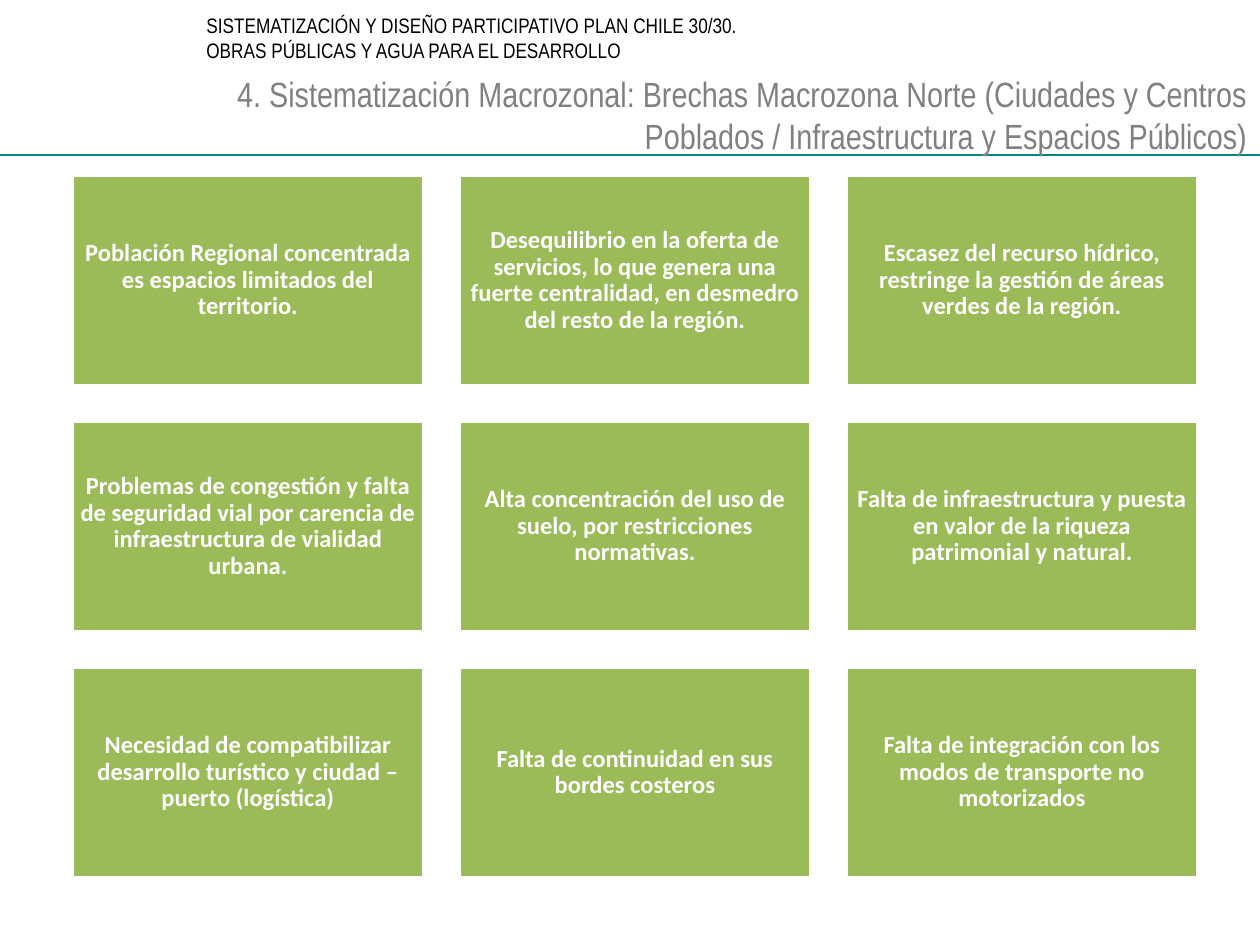
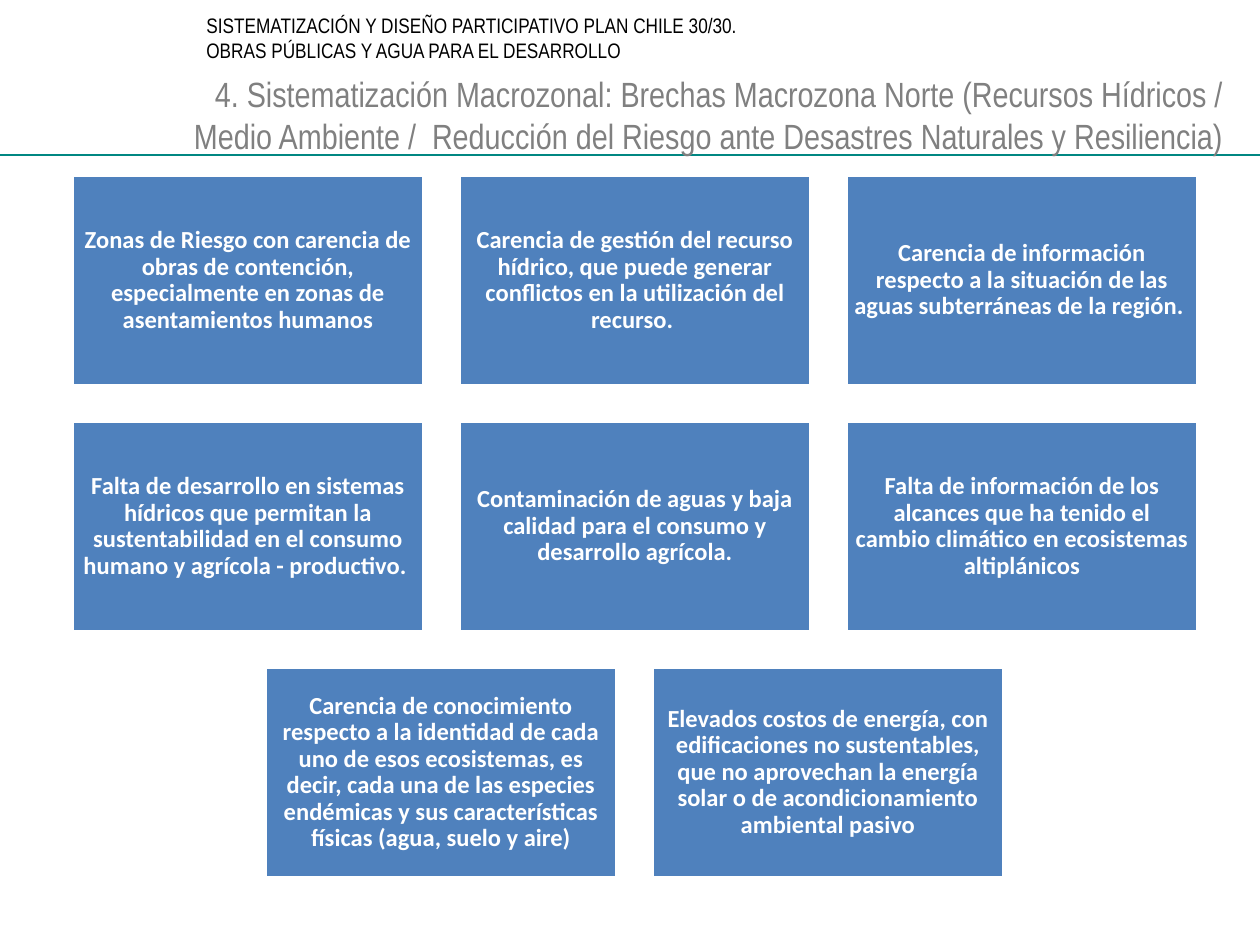
from dataclasses import dataclass

from lxml import etree
from pptx import Presentation
from pptx import util as u
from pptx.dml.color import RGBColor
from pptx.enum import shapes, text
from pptx.oxml.ns import qn

# Content
HEADER = ("SISTEMATIZACIÓN Y DISEÑO PARTICIPATIVO PLAN CHILE 30/30. "
          "OBRAS PÚBLICAS Y AGUA PARA EL DESARROLLO")

PAGES = [
    {
        "title": "4. Sistematización Macrozonal: Brechas Macrozona Norte "
                 "(Ciudades y Centros Poblados / Infraestructura y Espacios Públicos)",
        "title_area": (139, 66, 1121, 79),
        "card_color": "9BBB59",
        "gaps": [
            "Población Regional concentrada es espacios limitados del territorio.",
            "Desequilibrio en la oferta de servicios, lo que genera una fuerte "
            "centralidad, en desmedro del resto de la región.",
            "Escasez del recurso hídrico, restringe la gestión de áreas verdes de la región.",
            "Problemas de congestión y falta de seguridad vial por carencia de "
            "infraestructura de vialidad urbana.",
            "Alta concentración del uso de suelo, por restricciones normativas.",
            "Falta de infraestructura y puesta en valor de la riqueza patrimonial y natural.",
            "Necesidad de compatibilizar desarrollo turístico y ciudad – puerto (logística)",
            "Falta de continuidad en sus bordes costeros",
            "Falta de integración con los modos de transporte no motorizados",
        ],
    },
    {
        "title": "4. Sistematización Macrozonal: Brechas Macrozona Norte "
                 "(Recursos Hídricos / Medio Ambiente /  Reducción del Riesgo ante "
                 "Desastres Naturales y Resiliencia)",
        "title_area": (174, 66, 1062, 79),
        "card_color": "4F81BD",
        "gaps": [
            "Zonas de Riesgo con carencia de obras de contención, especialmente en "
            "zonas de asentamientos humanos",
            "Carencia de gestión del recurso hídrico, que puede generar conflictos en "
            "la utilización del recurso. ",
            "Carencia de información respecto a la situación de las aguas "
            "subterráneas de la región. ",
            "Falta de desarrollo en sistemas hídricos que permitan la sustentabilidad "
            "en el consumo humano y agrícola - productivo. ",
            "Contaminación de aguas y baja calidad para el consumo y desarrollo agrícola.",
            "Falta de información de los alcances que ha tenido el cambio climático "
            "en ecosistemas altiplánicos",
            "Carencia de conocimiento respecto a la identidad de cada uno de esos "
            "ecosistemas, es decir, cada una de las especies endémicas y sus "
            "características físicas (agua, suelo y aire)",
            "Elevados costos de energía, con edificaciones no sustentables, que no "
            "aprovechan la energía solar o de acondicionamiento ambiental pasivo",
        ],
    },
]


@dataclass(frozen=True)
class Theme:
    heading_font: str = "Arial Narrow"
    card_font: str = "Calibri"
    header_size: int = 12
    title_size: int = 20
    card_size: int = 14
    header_color: str = "000000"
    title_color: str = "808080"
    rule_color: str = "008782"
    white: str = "FFFFFF"


THEME = Theme()

# Layout, in px
SLIDE_WIDTH, SLIDE_HEIGHT = 1260, 945
HEADER_AREA = (194, 6, 605, 63)
RULE_Y = 155
COLUMNS = 3
GRID_LEFT, GRID_TOP = 72, 175
CARD_WIDTH, CARD_HEIGHT, CARD_GAP = 352, 211, 35
CARD_INSET = 8


def px(length):
    return u.Emu(round(length * 914400 / 126))


def area(box):
    return [px(length) for length in box]


def style(para, font, size, color, align, bold=False):
    para.alignment = align
    para.font.name = font
    para.font.size = u.Pt(size)
    para.font.bold = bold
    para.font.color.rgb = RGBColor.from_string(color)


def add_rule(page):
    rule = page.shapes.add_connector(
        shapes.MSO_CONNECTOR.STRAIGHT, 0, px(RULE_Y), px(SLIDE_WIDTH), px(RULE_Y))
    rule.line.color.rgb = RGBColor.from_string(THEME.rule_color)
    rule.line.width = u.Pt(0.75)
    etree.SubElement(rule.element.spPr, qn("a:effectLst"))
    # Keep the rule behind the title
    page.shapes.element.insert(2, rule.element)


def add_header(page):
    box = page.shapes.add_textbox(*area(HEADER_AREA))
    frame = box.text_frame
    frame.word_wrap = True
    frame.auto_size = text.MSO_AUTO_SIZE.SHAPE_TO_FIT_TEXT
    frame.text = HEADER
    style(frame.paragraphs[0], THEME.heading_font, THEME.header_size,
          THEME.header_color, text.PP_ALIGN.LEFT)


def fill_title(page, title, title_area):
    box = page.shapes.title
    box.left, box.top, box.width, box.height = area(title_area)
    frame = box.text_frame
    frame.text = title
    frame.word_wrap = True
    frame.auto_size = text.MSO_AUTO_SIZE.NONE
    frame.vertical_anchor = text.MSO_ANCHOR.TOP
    style(frame.paragraphs[0], THEME.heading_font, THEME.title_size,
          THEME.title_color, text.PP_ALIGN.RIGHT)


def add_card(page, left, top, gap, color):
    card = page.shapes.add_shape(
        shapes.MSO_SHAPE.RECTANGLE, *area((left, top, CARD_WIDTH, CARD_HEIGHT)))
    card.shadow.inherit = False
    card.fill.solid()
    card.fill.fore_color.rgb = RGBColor.from_string(color)
    card.line.color.rgb = RGBColor.from_string(THEME.white)
    card.line.width = u.Pt(2)
    frame = card.text_frame
    frame.word_wrap = True
    frame.vertical_anchor = text.MSO_ANCHOR.MIDDLE
    frame.margin_left = frame.margin_right = px(CARD_INSET)
    frame.margin_top = frame.margin_bottom = px(CARD_INSET)
    frame.text = gap
    para = frame.paragraphs[0]
    para.line_spacing = 0.9
    style(para, THEME.card_font, THEME.card_size, THEME.white,
          text.PP_ALIGN.CENTER, bold=True)


def add_cards(page, gaps, color):
    """Fill rows of three cards and centre a shorter last row."""
    step_x, step_y = CARD_WIDTH + CARD_GAP, CARD_HEIGHT + CARD_GAP
    for start in range(0, len(gaps), COLUMNS):
        row = gaps[start:start + COLUMNS]
        left = GRID_LEFT + (COLUMNS - len(row)) * step_x // 2
        top = GRID_TOP + start // COLUMNS * step_y
        for column, gap in enumerate(row):
            add_card(page, left + column * step_x, top, gap, color)


def main():
    deck = Presentation()
    deck.slide_width, deck.slide_height = px(SLIDE_WIDTH), px(SLIDE_HEIGHT)
    title_only = deck.slide_layouts.get_by_name("Title Only")
    for content in PAGES:
        page = deck.slides.add_slide(title_only)
        add_rule(page)
        add_header(page)
        fill_title(page, content["title"], content["title_area"])
        add_cards(page, content["gaps"], content["card_color"])
    deck.save("out.pptx")


if __name__ == "__main__":
    main()
